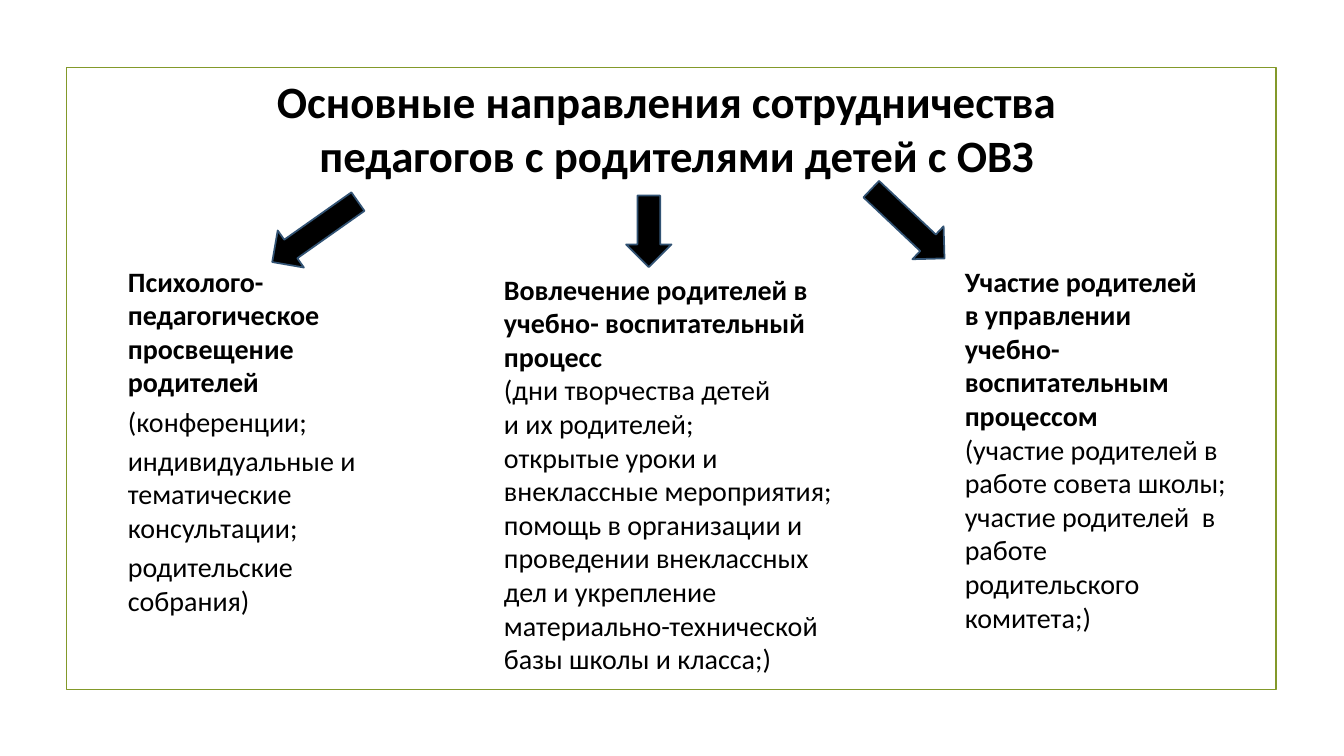
"""Build a slide on how teachers work with parents: a title, three arrows, three columns."""
from pptx import Presentation
from pptx.dml.color import RGBColor
from pptx.enum.shapes import MSO_SHAPE
from pptx.enum.text import MSO_ANCHOR, MSO_AUTO_SIZE, PP_ALIGN
from pptx.util import Inches, Pt

RECT, ARROW = MSO_SHAPE.RECTANGLE, MSO_SHAPE.DOWN_ARROW
TOP, CENTER, FIXED = MSO_ANCHOR.TOP, PP_ALIGN.CENTER, MSO_AUTO_SIZE.NONE
WIDTH, HEIGHT = 13.33, 7.5
BLACK, GREEN, BLUE = "000000", "83992A", "325374"


def paint(color, tint):
    color.rgb = RGBColor.from_string(tint)


def style(para, size, bold):
    font = para.font
    font.name, font.size, font.bold = "Calibri", Pt(size), bold
    paint(font.color, BLACK)


deck = Presentation()
deck.slide_width, deck.slide_height = Inches(WIDTH), Inches(HEIGHT)
slide = deck.slides.add_slide(deck.slide_layouts[5])
shapes = slide.shapes

frame = shapes.add_shape(RECT, Inches(0.66), Inches(0.67), Inches(12), Inches(6.17))
frame.shadow.inherit = False
frame.fill.background()
paint(frame.line.color, GREEN)
frame.line.width = Pt(1.25)

title = shapes.title
title.left, title.top = 0, Inches(0.68)
title.width, title.height = Inches(WIDTH), Inches(1.18)
title.text_frame.text = "Основные направления сотрудничества \v педагогов с родителями детей с ОВЗ"
title.text_frame.auto_size = FIXED
title.text_frame.vertical_anchor = TOP
head = title.text_frame.paragraphs[0]
head.alignment = CENTER
style(head, 32, True)

columns = [
    (1.17, 2.57, 3, 3.67, 4, 1, [
        "Психолого-педагогическое просвещение родителей",
        "(конференции;",
        "индивидуальные и тематические консультации;",
        "родительские собрания)"]),
    (4.9, 2.65, 3.53, 4.14, 0, 1, [
        "Вовлечение родителей в учебно- воспитательный процесс",
        "(дни творчества детей",
        "и их родителей;",
        "открытые уроки и внеклассные мероприятия;",
        "помощь в организации и проведении внеклассных дел и укрепление "
        "материально-технической базы школы и класса;)"]),
    (9.47, 2.57, 2.79, 4.14, 0, 3, [
        "Участие родителей",
        "в управлении",
        "учебно-воспитательным процессом",
        "(участие родителей в работе совета школы;",
        "участие родителей  в работе родительского комитета;)"]),
]
for left, top, wide, high, gap, bolds, lines in columns:
    box = shapes.add_textbox(Inches(left), Inches(top), Inches(wide), Inches(high))
    text = box.text_frame
    text.word_wrap = True
    text.text = "\n".join(lines)
    for row, para in enumerate(text.paragraphs):
        style(para, 20, row < bolds)
        if row:
            para.space_before = Pt(gap)

arrows = [(2.9, 1.78, 1.04, 54.8), (8.78, 1.72, 1, 313.4), (6.21, 1.94, 0.71, 0)]
for left, top, high, turn in arrows:
    arrow = shapes.add_shape(ARROW, Inches(left), Inches(top), Inches(0.45), Inches(high))
    arrow.rotation = turn
    arrow.shadow.inherit = False
    arrow.fill.solid()
    paint(arrow.fill.fore_color, BLACK)
    paint(arrow.line.color, BLUE)
    arrow.line.width = Pt(1.25)

deck.save("out.pptx")
